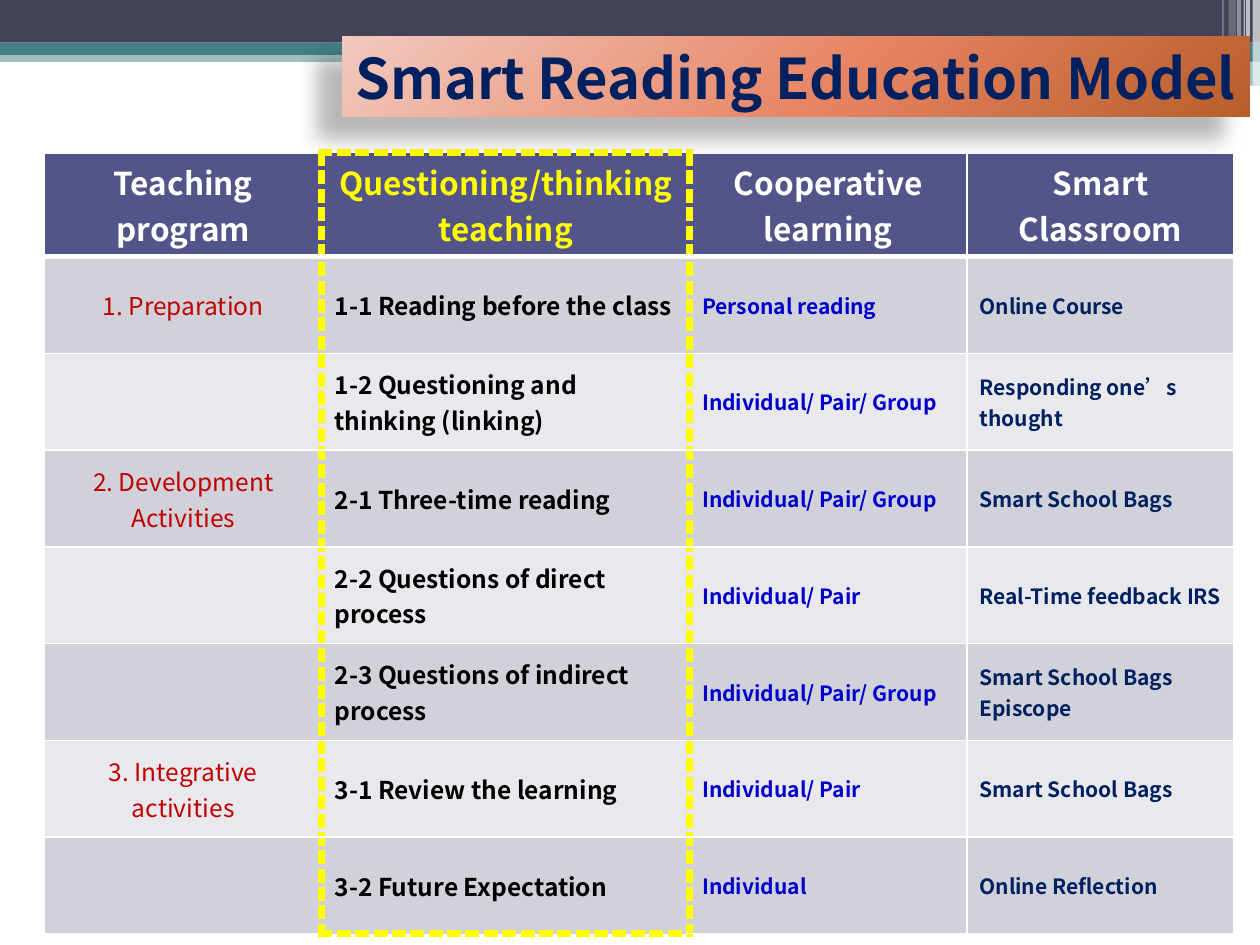
from dataclasses import dataclass

from lxml.etree import SubElement
from pptx import Presentation
from pptx.dml.color import RGBColor
from pptx.enum.shapes import MSO_SHAPE as Preset
from pptx.enum.text import MSO_ANCHOR as Anchor, MSO_AUTO_SIZE as AutoSize, PP_ALIGN as Align
from pptx.oxml import parse_xml
from pptx.oxml.ns import nsdecls, qn
from pptx.util import Cm, Pt

FONT = "Noto Sans CJK SC"
WHITE, YELLOW, NAVY, TEAL, SLATE = "FFFFFF", "FFFF00", "002060", "438086", "424456"
HEADER_FILL, ROW_FILLS = "53548A", ("D1D1DA", "E9E9ED")


@dataclass(frozen=True)
class Bar:
    left: float
    top: float
    width: float
    height: float
    color: str
    opacity: int = 100
    preset: Preset = Preset.RECTANGLE


@dataclass(frozen=True)
class Column:
    width: float
    size: int
    color: str
    bold: bool = True
    align: Align = Align.LEFT
    heading: str = WHITE


@dataclass(frozen=True)
class Border:
    color: str = WHITE
    width: float = 1
    dash: str = "solid"


THIN, THICK, DASHED = Border(), Border(width=3), Border(YELLOW, 4.5, "lgDash")

BARS = [
    Bar(0, 1.02, 25.4, 0.23, TEAL, 50),
    Bar(0, 0, 25.4, 0.86, SLATE),
    Bar(0, 0.86, 25.4, 0.25, TEAL),
    Bar(15.03, 0.99, 10.37, 0.25, TEAL),
    Bar(15.03, 1.22, 10.37, 0.51, TEAL, 50),
    Bar(15.02, 1.37, 8.5, 0.08, WHITE, preset=Preset.ROUNDED_RECTANGLE),
    Bar(20.47, 1.63, 4.45, 0.1, WHITE, preset=Preset.ROUNDED_RECTANGLE),
    Bar(25.25, 0, 0.15, 1.73, WHITE, 65),
    Bar(25.12, 0, 0.08, 1.73, WHITE, 65),
    Bar(25.07, 0, 0.03, 1.73, WHITE, 60),
    Bar(24.94, 0, 0.08, 1.73, WHITE, 40),
    Bar(24.77, 0, 0.15, 1.63, WHITE, 20),
    Bar(24.64, 0, 0.03, 1.63, WHITE, 30),
]

COLUMNS = [
    Column(5.59, 14, "C00000", bold=False, align=Align.CENTER),
    Column(7.41, 14, "000000", heading=YELLOW),
    Column(5.59, 12, "0000CC"),
    Column(5.39, 12, NAVY),
]
FRAMED = 1

ROWS = [
    ("Teaching program", "Questioning/thinking teaching", "Cooperative learning", "Smart Classroom"),
    ("1. Preparation", "1-1 Reading before the class", "Personal reading", "Online Course"),
    ("", "1-2 Questioning and thinking (linking)", "Individual/ Pair/ Group", "Responding one’s thought"),
    ("2. Development Activities", "2-1 Three-time reading", "Individual/ Pair/ Group", "Smart School Bags"),
    ("", "2-2 Questions of direct process", "Individual/ Pair", "Real-Time feedback IRS"),
    ("", "2-3 Questions of indirect process", "Individual/ Pair/ Group", "Smart School Bags\nEpiscope"),
    ("3. Integrative activities", "3-1 Review the learning", "Individual/ Pair", "Smart School Bags"),
    ("", "3-2 Future Expectation", "Individual", "Online Reflection"),
]

TITLE_GRADIENT = f"""<a:gradFill {nsdecls('a')} rotWithShape="1"><a:gsLst>
<a:gs pos="0"><a:srgbClr val="F2C9BF"/></a:gs>
<a:gs pos="55000"><a:srgbClr val="E78463"/></a:gs>
<a:gs pos="100000"><a:srgbClr val="B75E2A"/></a:gs></a:gsLst>
<a:path path="circle"><a:fillToRect l="-40000" t="-90000" r="140000" b="190000"/></a:path>
</a:gradFill>"""

TITLE_SHADOW = f"""<a:effectLst {nsdecls('a')}>
<a:outerShdw blurRad="{Pt(11.8)}" dist="{Pt(19.7)}" dir="{141 * 60000}" algn="ctr" rotWithShape="0">
<a:srgbClr val="000000"><a:alpha val="28000"/></a:srgbClr></a:outerShdw></a:effectLst>"""


def paint(target, color: str) -> None:
    target.solid()
    target.fore_color.rgb = RGBColor.from_string(color)


def write(frame, text: str, *, size: int, color: str, bold: bool = True, align: Align = Align.LEFT) -> None:
    for number, line in enumerate(text.split("\n")):
        para = frame.add_paragraph() if number else frame.paragraphs[0]
        para.alignment = align
        if line:
            span = para.add_run()
            span.text = line
            span.font.size = Pt(size)
            span.font.bold = bold
            span.font.name = FONT
            paint(span.font.fill, color)
            SubElement(span.font._element, qn("a:ea"), typeface=FONT)


def draw_bar(page, bar: Bar):
    box = page.shapes.add_shape(bar.preset, Cm(bar.left), Cm(bar.top), Cm(bar.width), Cm(bar.height))
    box.shadow.inherit = False
    box.line.fill.background()
    paint(box.fill, bar.color)
    if bar.opacity < 100:
        color = box._element.spPr.find(f".//{qn('a:srgbClr')}")
        SubElement(color, qn("a:alpha"), val=str(bar.opacity * 1000))
    return box


def draw_border(cell, side: str, border: Border) -> None:
    line = SubElement(cell._tc.get_or_add_tcPr(), qn(f"a:ln{side}"), w=str(Pt(border.width)))
    fill = SubElement(line, qn("a:solidFill"))
    SubElement(fill, qn("a:srgbClr"), val=border.color)
    SubElement(line, qn("a:prstDash"), val=border.dash)


def cell_borders(row: int, column: int) -> dict[str, Border]:
    framed = column == FRAMED
    return {
        "L": DASHED if column in (FRAMED, FRAMED + 1) else THIN,
        "R": DASHED if column in (FRAMED - 1, FRAMED) else THIN,
        "T": DASHED if framed and row == 0 else THICK if row == 1 else THIN,
        "B": THICK if row == 0 else DASHED if framed and row == len(ROWS) - 1 else THIN,
    }


def draw_table(page, left: float, top: float, row_height: float) -> None:
    width = sum(column.width for column in COLUMNS)
    table = page.shapes.add_table(
        len(ROWS), len(COLUMNS), Cm(left), Cm(top), Cm(width), Cm(row_height * len(ROWS))
    ).table
    for index, column in enumerate(COLUMNS):
        table.columns[index].width = Cm(column.width)
        for row, texts in enumerate(ROWS):
            cell = table.cell(row, index)
            cell.vertical_anchor = Anchor.MIDDLE
            for side, border in cell_borders(row, index).items():
                draw_border(cell, side, border)
            if row == 0:
                paint(cell.fill, HEADER_FILL)
                write(cell.text_frame, texts[index], size=18, color=column.heading, align=Align.CENTER)
            else:
                paint(cell.fill, ROW_FILLS[(row - 1) % 2])
                write(cell.text_frame, texts[index], size=column.size, color=column.color,
                      bold=column.bold, align=column.align)


def draw_title(page, text: str) -> None:
    box = draw_bar(page, Bar(6.91, 0.73, 18.29, 1.63, WHITE))
    properties = box._element.spPr
    for tag, xml in (("a:solidFill", TITLE_GRADIENT), ("a:effectLst", TITLE_SHADOW)):
        properties.replace(properties.find(qn(tag)), parse_xml(xml))
    frame = box.text_frame
    frame.word_wrap = False
    frame.auto_size = AutoSize.SHAPE_TO_FIT_TEXT
    frame.vertical_anchor = Anchor.MIDDLE
    frame.margin_top = frame.margin_bottom = 0
    write(frame, text, size=32, color=NAVY)


def main() -> None:
    deck = Presentation()
    deck.slide_width, deck.slide_height = Cm(25.4), Cm(19.05)
    page = deck.slides.add_slide(deck.slide_layouts[6])
    for bar in BARS:
        draw_bar(page, bar)
    draw_table(page, 0.9, 3.08, 1.95)
    draw_title(page, "Smart Reading Education Model")
    deck.save("out.pptx")


if __name__ == "__main__":
    main()
